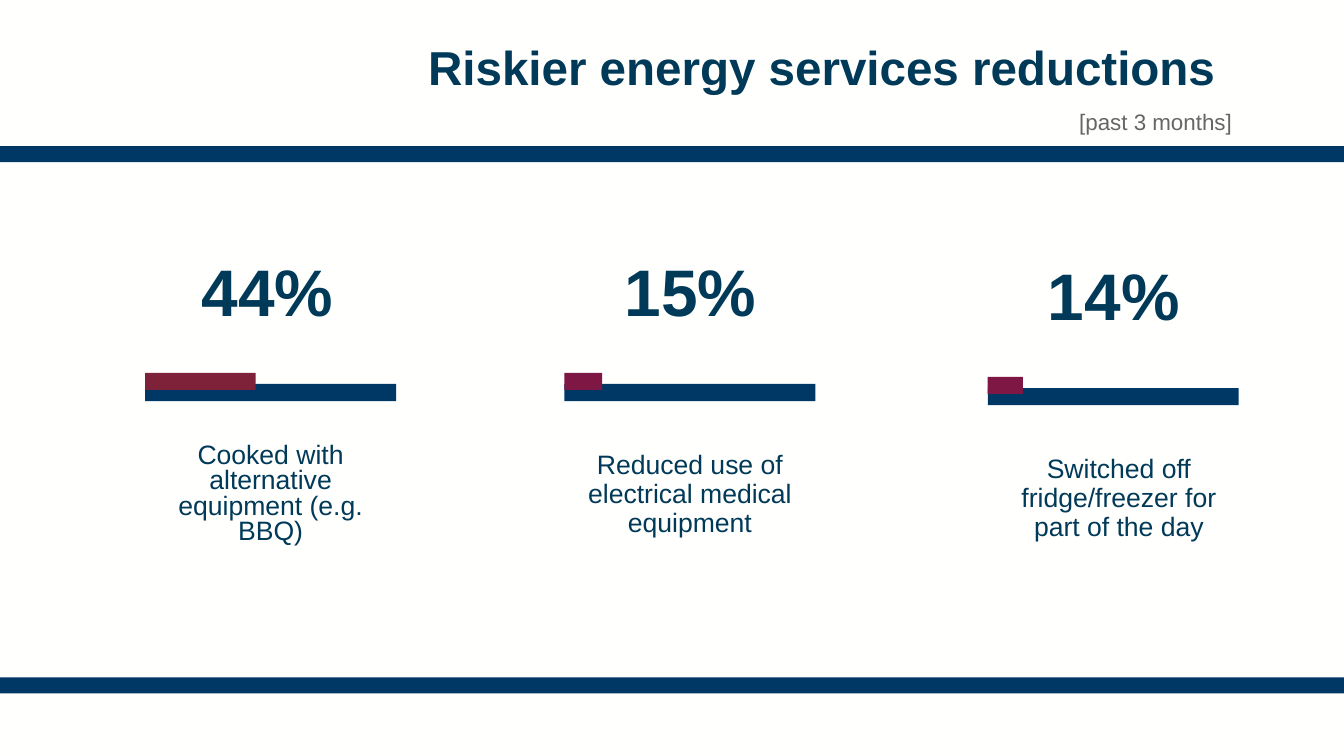
from pptx import Presentation
from pptx.dml.color import RGBColor
from pptx.enum.shapes import MSO_SHAPE
from pptx.enum.text import MSO_ANCHOR, PP_ALIGN
from pptx.util import Pt

HEADLINE = "Riskier energy services reductions"
PERIOD = "[past 3 months]"
REDUCTIONS = [
    {"percent": 44, "caption": "Cooked with alternative equipment (e.g. BBQ)",
     "center": 193.3, "figure_shift": -2.2, "caption_shift": 0, "drop": 0,
     "caption_width": 167.8, "spacing": 0.8, "accent": "wine"},
    {"percent": 15, "caption": "Reduced use of electrical medical equipment",
     "center": 492.8, "figure_shift": 0.4, "caption_shift": 0, "drop": 0,
     "caption_width": 179.3, "spacing": 0.9, "accent": "plum"},
    {"percent": 14, "caption": "Switched off fridge/freezer for part of the day",
     "center": 795.2, "figure_shift": 0.4, "caption_shift": 4, "drop": 2.9,
     "caption_width": 188.6, "spacing": 0.9, "accent": "plum"},
]

THEME = {
    "font": "Arial",
    "paper": RGBColor.from_string("FFFFFE"),
    "navy": RGBColor.from_string("003865"),
    "ink": RGBColor.from_string("003A58"),
    "wine": RGBColor.from_string("7D2238"),
    "plum": RGBColor.from_string("7F1745"),
    "grey": RGBColor.from_string("666666"),
    "headline": 34,
    "figure": 47,
    "caption": 19,
    "period": 16,
}

SLIDE_W, SLIDE_H = 960, 540
BAND_TOPS, BAND_H = (104.4, 483.8), 11.5
TRACK_W, TRACK_H, TRACK_TOP = 179.3, 12.2, 274.3
SHARE_TOP = 266.4
FIGURE_TOP, FIGURE_W, FIGURE_H = 142.6, 174.2, 136.8
CAPTION_TOP, CAPTION_H = 309.6, 87.8


def add_bar(slide, left, top, width, height, color):
    bar = slide.shapes.add_shape(
        MSO_SHAPE.RECTANGLE, Pt(left), Pt(top), Pt(width), Pt(height))
    bar.shadow.inherit = False
    bar.fill.solid()
    bar.fill.fore_color.rgb = THEME[color]
    bar.line.fill.background()


def add_text(slide, text, left, top, width, height, size, color="ink",
             bold=False, align=PP_ALIGN.CENTER, anchor=MSO_ANCHOR.MIDDLE,
             spacing=0.9, inset_y=3.6, inset_right=7.2):
    box = slide.shapes.add_textbox(Pt(left), Pt(top), Pt(width), Pt(height))
    frame = box.text_frame
    frame.word_wrap = True
    frame.vertical_anchor = anchor
    frame.margin_left, frame.margin_right = Pt(7.2), Pt(inset_right)
    frame.margin_top = frame.margin_bottom = Pt(inset_y)
    paragraph = frame.paragraphs[0]
    paragraph.alignment = align
    paragraph.line_spacing = spacing
    run = paragraph.add_run()
    run.text = text
    run.font.name = THEME["font"]
    run.font.size = Pt(THEME[size])
    run.font.bold = bold
    run.font.color.rgb = THEME[color]


def add_reduction(slide, reduction):
    center, drop = reduction["center"], reduction["drop"]
    track_left = center - TRACK_W / 2
    add_text(slide, f"{reduction['percent']}%",
             center + reduction["figure_shift"] - FIGURE_W / 2,
             FIGURE_TOP + drop, FIGURE_W, FIGURE_H, "figure", bold=True)
    add_bar(slide, track_left, TRACK_TOP + drop, TRACK_W, TRACK_H, "navy")
    add_bar(slide, track_left, SHARE_TOP + drop,
            TRACK_W * reduction["percent"] / 100, TRACK_H, reduction["accent"])
    width = reduction["caption_width"]
    add_text(slide, reduction["caption"],
             center + reduction["caption_shift"] - width / 2,
             CAPTION_TOP + drop, width, CAPTION_H, "caption",
             spacing=reduction["spacing"])


def main():
    deck = Presentation()
    deck.slide_width, deck.slide_height = Pt(SLIDE_W), Pt(SLIDE_H)
    slide = deck.slides.add_slide(deck.slide_layouts[6])
    slide.background.fill.solid()
    slide.background.fill.fore_color.rgb = THEME["paper"]

    for band_top in BAND_TOPS:
        add_bar(slide, 0, band_top, SLIDE_W, BAND_H, "navy")
    add_text(slide, HEADLINE, 87.1, 18, 797.8, 63.4, "headline", bold=True,
             align=PP_ALIGN.RIGHT, inset_right=16.65)
    add_text(slide, PERIOD, 691.9, 69.8, 195.1, 33.8, "period", color="grey",
             align=PP_ALIGN.RIGHT, anchor=MSO_ANCHOR.TOP, spacing=1.0,
             inset_y=7.2)
    for reduction in REDUCTIONS:
        add_reduction(slide, reduction)
    deck.save("out.pptx")


if __name__ == "__main__":
    main()
